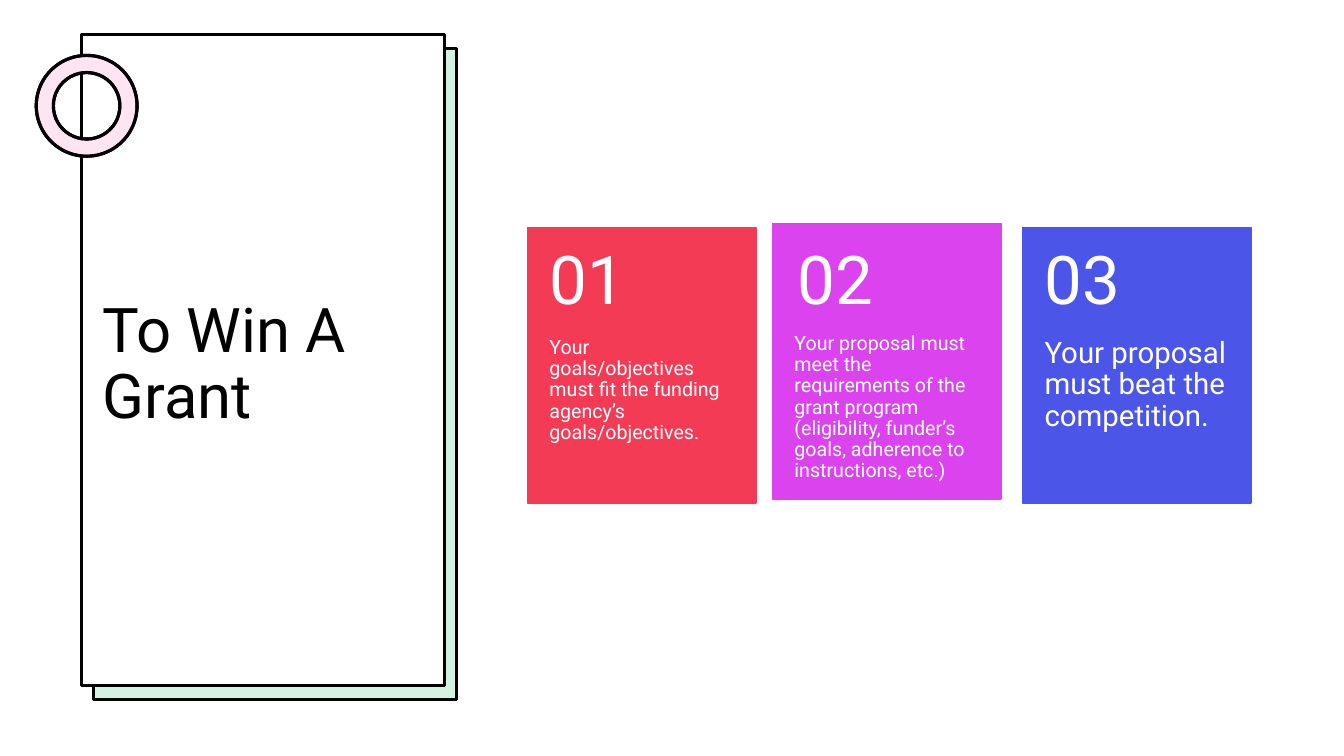
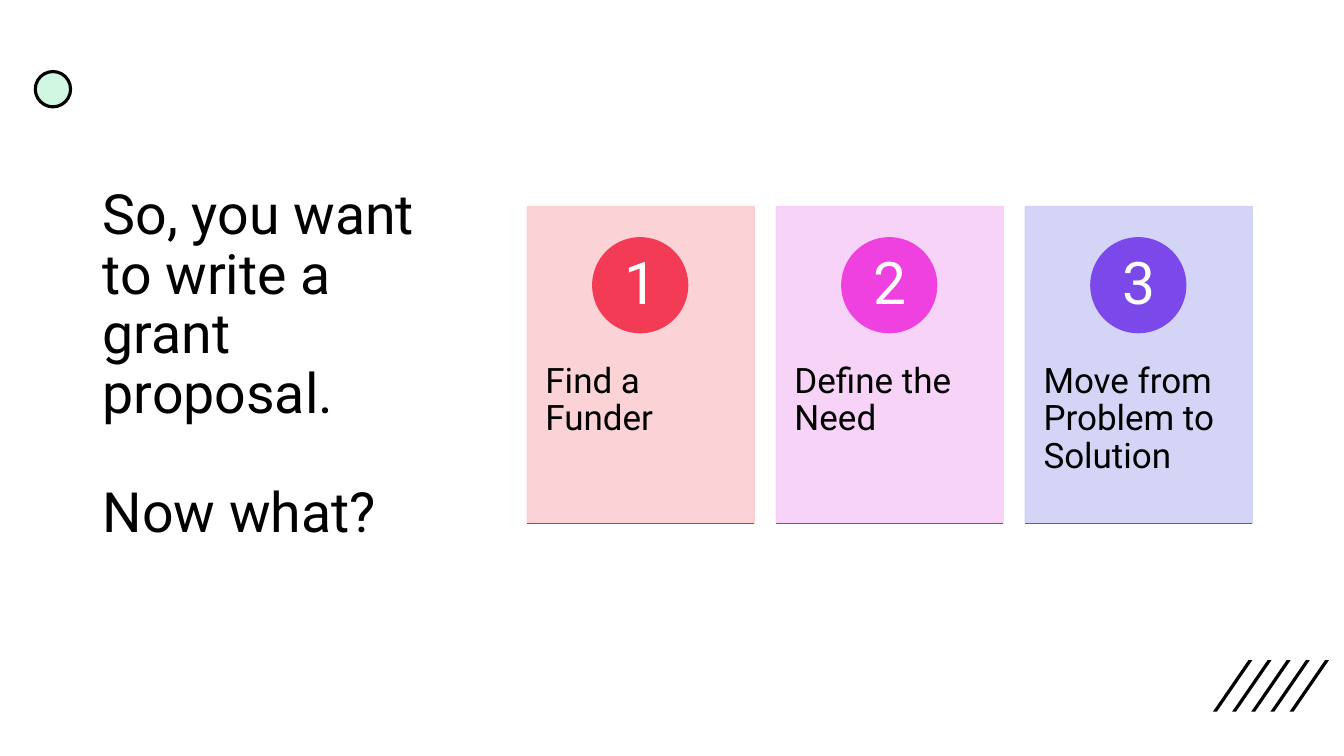
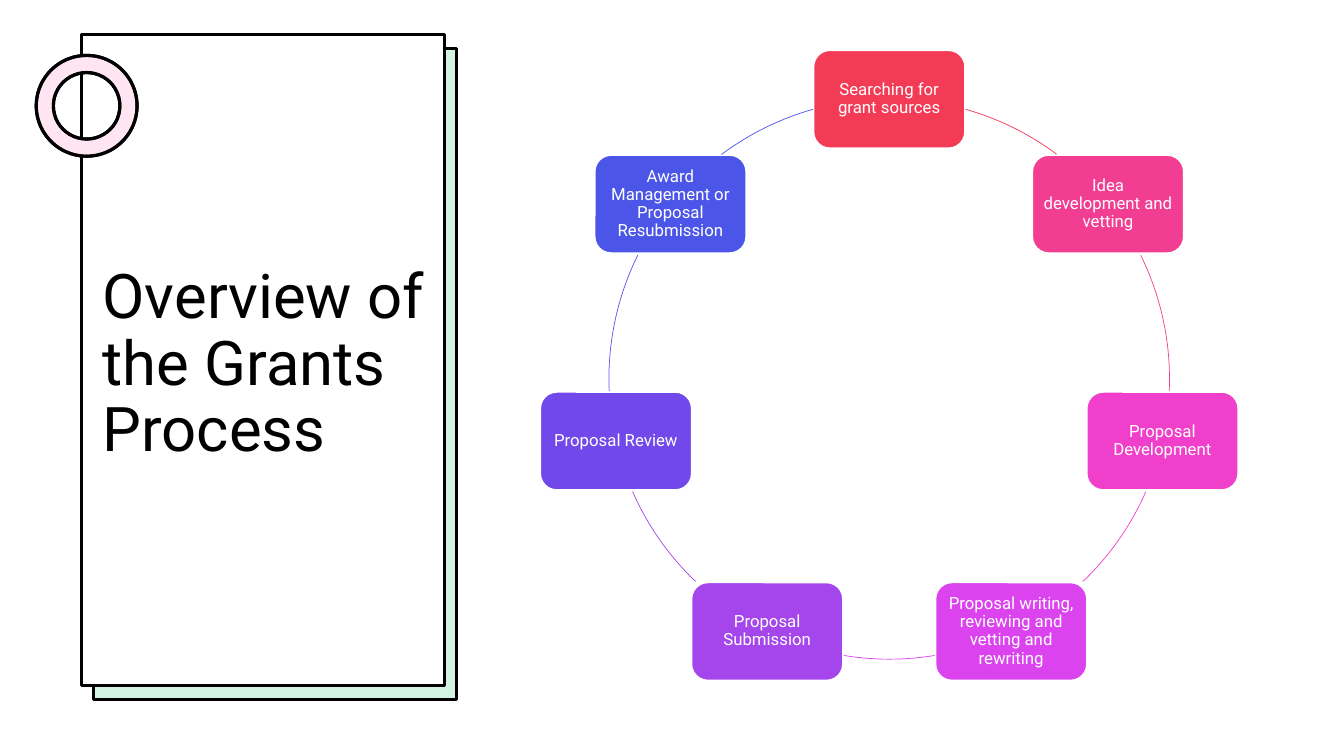
"""Build three slides on winning a grant and the grants process."""
from dataclasses import dataclass
from math import cos, radians, sin, tau

from lxml.etree import SubElement
from pptx import Presentation
from pptx.dml.color import RGBColor
from pptx.enum.shapes import MSO_CONNECTOR, MSO_SHAPE
from pptx.enum.text import MSO_ANCHOR, PP_ALIGN
from pptx.oxml.ns import qn
from pptx.shapes.autoshape import Shape
from pptx.slide import Slide
from pptx.util import Emu, Pt

EMU_PER_PX = 9144
FONT = "Roboto"
COLORS = {
    "black": "000000", "white": "FFFFFF", "green": "21C46B", "mint": "CFF7E1",
    "ring": "FF80BD", "rule": "666666",
    "red": "F43B56", "rose": "F23E92", "pink": "F040CB", "magenta": "EF41E0",
    "orchid": "DB43EE", "purple": "A546EC", "violet": "7148EA",
    "iris": "7B48EA", "blue": "4B56E8",
    "pale red": "FBCED1", "pale orchid": "F7CFF8", "pale blue": "D0D1F6",
}


@dataclass(frozen=True)
class Box:
    left: int
    top: int
    width: int
    height: int

    def emu(self) -> tuple[Emu, ...]:
        return tuple(px(v) for v in (self.left, self.top, self.width, self.height))


@dataclass(frozen=True)
class TextStyle:
    size: float
    color: str = "white"
    align: PP_ALIGN = PP_ALIGN.LEFT
    anchor: MSO_ANCHOR = MSO_ANCHOR.MIDDLE
    insets: tuple[int, int, int, int] = (10, 5, 10, 5)
    space_before: int = 0


@dataclass(frozen=True)
class Requirement:
    number: str
    text: str
    color: str
    left: int
    top: int
    number_left: int
    size: int


@dataclass(frozen=True)
class Action:
    number: str
    text: str
    color: str
    tint: str


@dataclass(frozen=True)
class Stage:
    text: str
    color: str
    arc_start: float
    arc_end: float


TITLE_BOX = Box(92, 131, 340, 463)
TITLE = TextStyle(44, "black")
LONG_TITLE = TextStyle(39.6, "black", space_before=42)
REQUIREMENT_NUMBER = TextStyle(48, insets=(22, 18, 22, 18))
ACTION_NUMBER = TextStyle(42, align=PP_ALIGN.CENTER, insets=(7, 1, 7, 1))
ACTION_TEXT = TextStyle(25, "black", anchor=MSO_ANCHOR.TOP, insets=(18, 36, 18, 36))
STAGE_TEXT = TextStyle(12, align=PP_ALIGN.CENTER, insets=(5, 5, 5, 5))

REQUIREMENTS = [
    Requirement("01", "Your goals/objectives must fit the funding agency’s goals/objectives.",
                "red", 523, 226, 523, 14),
    Requirement("02", "Your proposal must meet the requirements of the grant program "
                "(eligibility, funder’s goals, adherence to instructions, etc.)",
                "orchid", 766, 222, 769, 14),
    Requirement("03", "Your proposal must beat the competition.",
                "blue", 1014, 226, 1014, 21),
]
ACTIONS = [
    Action("1", "Find a Funder", "red", "pale red"),
    Action("2", "Define the Need", "magenta", "pale orchid"),
    Action("3", "Move from Problem to Solution", "iris", "pale blue"),
]
STAGES = [
    Stage("Searching for grant sources", "red", 285.8, 306.8),
    Stage("Idea development and vetting", "rose", 333.8, 2.5),
    Stage("Proposal Development", "pink", 23.7, 46.3),
    Stage("Proposal writing, reviewing and vetting and rewriting", "orchid", 80.7, 99.3),
    Stage("Proposal Submission", "purple", 133.7, 156.3),
    Stage("Proposal Review", "violet", 177.5, 206.2),
    Stage("Award Management or Proposal Resubmission", "blue", 233.2, 254.2),
]


def px(value: float) -> Emu:
    return Emu(round(value * EMU_PER_PX))


def rgb(name: str) -> RGBColor:
    return RGBColor.from_string(COLORS[name])


def draw(slide: Slide, kind: MSO_SHAPE, box: Box, fill: str | None,
         line: str | None = None, weight: float = 1,
         fill_opacity: int = 100, line_opacity: int = 100) -> Shape:
    shape = slide.shapes.add_shape(kind, *box.emu())
    shape.shadow.inherit = False
    if fill:
        shape.fill.solid()
        shape.fill.fore_color.rgb = rgb(fill)
    else:
        shape.fill.background()
    if line:
        shape.line.color.rgb = rgb(line)
        shape.line.width = Pt(weight)
    else:
        shape.line.fill.background()
    paints = list(shape._element.spPr.iter(qn("a:srgbClr")))
    for paint, opacity in zip(paints, (fill_opacity, line_opacity)):
        if opacity < 100:
            SubElement(paint, qn("a:alpha")).set("val", str(opacity * 1000))
    return shape


def write(shape: Shape, text: str, style: TextStyle) -> None:
    frame = shape.text_frame
    frame.word_wrap = True
    frame.vertical_anchor = style.anchor
    (frame.margin_left, frame.margin_top,
     frame.margin_right, frame.margin_bottom) = map(px, style.insets)
    frame.text = text
    for index, paragraph in enumerate(frame.paragraphs):
        paragraph.alignment = style.align
        paragraph.line_spacing = 0.9
        if index:
            paragraph.space_before = Pt(style.space_before)
        paragraph.font.name = FONT
        paragraph.font.size = Pt(style.size)
        paragraph.font.color.rgb = rgb(style.color)


def add_text(slide: Slide, box: Box, text: str, style: TextStyle) -> None:
    write(slide.shapes.add_textbox(*box.emu()), text, style)


def draw_title_panel(slide: Slide, title: str) -> None:
    draw(slide, MSO_SHAPE.RECTANGLE, Box(93, 48, 360, 646), "green", "black", 2.25, 20)
    draw(slide, MSO_SHAPE.RECTANGLE, Box(81, 34, 360, 646), "white", "black", 2.25)
    for color, opacity in (("white", 100), ("ring", 20)):
        ring = draw(slide, MSO_SHAPE.DONUT, Box(36, 55, 100, 100), color, "black", 2.25, opacity)
        ring.adjustments[0] = 0.17
    add_text(slide, TITLE_BOX, title, TITLE)


def draw_requirement(slide: Slide, item: Requirement) -> None:
    width, height, number_height = 227, 273, 109
    draw(slide, MSO_SHAPE.RECTANGLE, Box(item.left, item.top, width, height),
         item.color, item.color)
    add_text(slide, Box(item.left, item.top + number_height, width, height - number_height),
             item.text, TextStyle(item.size, anchor=MSO_ANCHOR.TOP, insets=(22, 0, 22, 36)))
    add_text(slide, Box(item.number_left, 226, width, number_height),
             item.number, REQUIREMENT_NUMBER)


def draw_action(slide: Slide, item: Action, left: int) -> None:
    top, width, height, disc, number = 205, 225, 314, 94, 67
    draw(slide, MSO_SHAPE.RECTANGLE, Box(left, top, width, height),
         item.tint, item.tint, 1, 90, 90)
    add_text(slide, Box(left, 324, width, 189), item.text, ACTION_TEXT)
    draw(slide, MSO_SHAPE.OVAL, Box(left + 65, 236, disc, disc), item.color, item.color)
    add_text(slide, Box(left + 79, 250, number, number), item.number, ACTION_NUMBER)
    bottom = px(top + height)
    rule = slide.shapes.add_connector(
        MSO_CONNECTOR.STRAIGHT, px(left), bottom, px(left + width), bottom)
    rule.line.color.rgb = rgb("rule")
    rule.line.width = Pt(0.75)
    SubElement(rule._element.spPr, qn("a:effectLst"))


def draw_cycle(slide: Slide, stages: list[Stage]) -> None:
    center_x, center_y, radius, width, height = 882, 376, 278, 150, 97
    orbit = Box(center_x - radius, center_y - radius, 2 * radius, 2 * radius)
    for index, stage in enumerate(stages):
        angle = index * tau / len(stages) - radians(90)
        box = Box(round(center_x + radius * cos(angle) - width / 2),
                  round(center_y + radius * sin(angle) - height / 2), width, height)
        node = draw(slide, MSO_SHAPE.ROUNDED_RECTANGLE, box, stage.color, "white")
        write(node, stage.text, STAGE_TEXT)
        arc = draw(slide, MSO_SHAPE.ARC, orbit, None, stage.color, 0.5)
        arc.adjustments[0] = stage.arc_start * 0.6
        arc.adjustments[1] = stage.arc_end * 0.6


def draw_ornaments(slide: Slide) -> None:
    for index in range(5):
        stripe = draw(slide, MSO_SHAPE.PARALLELOGRAM,
                      Box(1203 + 19 * index, 655, 39, 51), "black")
        stripe.adjustments[0] = 0.9
    draw(slide, MSO_SHAPE.OVAL, Box(35, 71, 35, 35), "mint", "black", 2.25)


def main() -> None:
    deck = Presentation()
    deck.slide_width, deck.slide_height = px(1333), px(750)
    win, start, overview = (deck.slides.add_slide(deck.slide_layouts[6]) for _ in range(3))

    draw_title_panel(win, "To Win A Grant")
    for requirement in REQUIREMENTS:
        draw_requirement(win, requirement)

    draw_ornaments(start)
    add_text(start, TITLE_BOX, "So, you want to write a grant proposal.\nNow what?", LONG_TITLE)
    for index, action in enumerate(ACTIONS):
        draw_action(start, action, 523 + 247 * index)

    draw_title_panel(overview, "Overview of the Grants Process")
    draw_cycle(overview, STAGES)

    deck.save("out.pptx")


if __name__ == "__main__":
    main()
